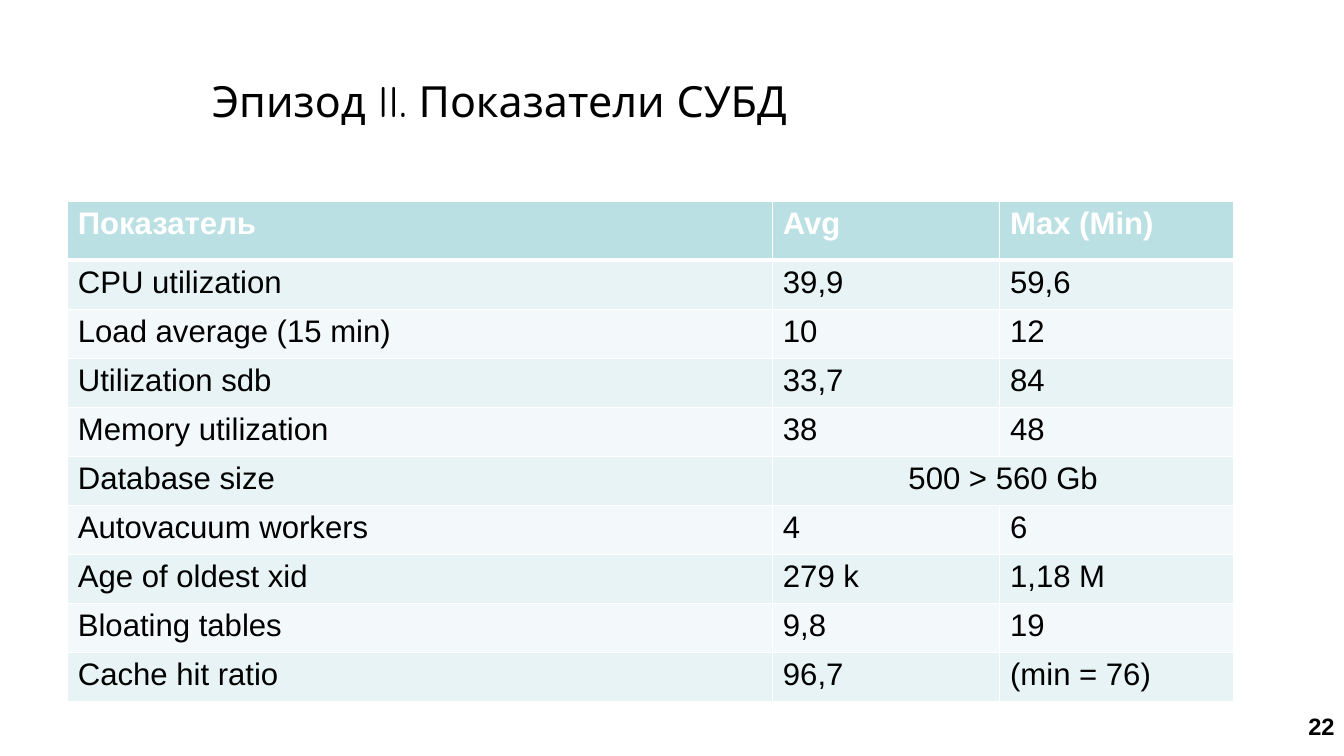
import lxml.etree
import pptx
import pptx.dml.color
import pptx.enum.text
import pptx.oxml.ns
import pptx.util

COLORS = {
    "text": "000000",
    "header_text": "FFFFFF",
    "border": "FFFFFF",
    "header": "BBE0E3",
    "odd_row": "E7F3F4",
    "even_row": "F3F9FA",
}
Inches = pptx.util.Inches
Align = pptx.enum.text.PP_ALIGN

COLUMN_WIDTHS = [6.61, 2.13, 2.2]
HEADER_HEIGHT, ROW_HEIGHT = 0.55, 0.46
METRICS = [
    ("Показатель", "Avg", "Max (Min)"),
    ("CPU utilization", "39,9", "59,6"),
    ("Load average (15 min)", "10", "12"),
    ("Utilization sdb", "33,7", "84"),
    ("Memory utilization", "38", "48"),
    ("Database size", "500 > 560 Gb", None),
    ("Autovacuum workers", "4", "6"),
    ("Age of oldest xid", "279 k", "1,18 M"),
    ("Bloating tables", "9,8", "19"),
    ("Cache hit ratio", "96,7", "(min = 76)"),
]


def write_text(text_frame, text, size, font_name, color, bold=False, alignment=Align.LEFT):
    text_frame.text = text
    text_frame.word_wrap = True
    paragraph = text_frame.paragraphs[0]
    paragraph.alignment = alignment
    font = paragraph.runs[0].font
    font.size = pptx.util.Pt(size)
    font.name = font_name
    font.bold = bold
    font.color.rgb = pptx.dml.color.RGBColor.from_string(COLORS[color])


def set_borders(cell, bottom_width, top_width):
    """Draw the four cell borders; they must precede the fill in tcPr."""
    properties = cell._tc.get_or_add_tcPr()
    widths = {"lnL": 1, "lnR": 1, "lnT": top_width, "lnB": bottom_width}
    for position, (side, width) in enumerate(widths.items()):
        line = lxml.etree.Element(pptx.oxml.ns.qn(f"a:{side}"), w=str(pptx.util.Pt(width)))
        fill = lxml.etree.SubElement(line, pptx.oxml.ns.qn("a:solidFill"))
        lxml.etree.SubElement(fill, pptx.oxml.ns.qn("a:srgbClr"), val=COLORS["border"])
        properties.insert(position, line)


presentation = pptx.Presentation()
presentation.slide_width = Inches(12.6)
presentation.slide_height = Inches(7.09)
slide = presentation.slides.add_slide(presentation.slide_layouts[6])

# Slide number
number_box = slide.shapes.add_textbox(Inches(11.6), Inches(6.6), Inches(1.01), Inches(0.39))
write_text(number_box.text_frame, "22", 16, "Arial", "text", bold=True, alignment=Align.RIGHT)
number_box.text_frame.paragraphs[0].line_spacing = 1.1

# Title
title_box = slide.shapes.add_textbox(Inches(1.89), Inches(0.38), Inches(5.86), Inches(1.12))
write_text(title_box.text_frame, "Эпизод II. Показатели СУБД", 29, "Quicksand", "text")
title_box.text_frame.vertical_anchor = pptx.enum.text.MSO_ANCHOR.MIDDLE

# Metrics table
table_height = HEADER_HEIGHT + ROW_HEIGHT * (len(METRICS) - 1)
table = slide.shapes.add_table(
    len(METRICS), len(COLUMN_WIDTHS),
    Inches(0.63), Inches(1.89), Inches(sum(COLUMN_WIDTHS)), Inches(table_height),
).table
for column, width in zip(table.columns, COLUMN_WIDTHS):
    column.width = Inches(width)

for row_index, values in enumerate(METRICS):
    is_header = row_index == 0
    table.rows[row_index].height = Inches(HEADER_HEIGHT if is_header else ROW_HEIGHT)
    row_fill = "header" if is_header else ("even_row", "odd_row")[row_index % 2]
    spans_columns = values[-1] is None
    if spans_columns:
        table.cell(row_index, 1).merge(table.cell(row_index, 2))

    for column_index, value in enumerate(values):
        cell = table.cell(row_index, column_index)
        cell.fill.solid()
        cell.fill.fore_color.rgb = pptx.dml.color.RGBColor.from_string(COLORS[row_fill])
        set_borders(cell, bottom_width=3 if is_header else 1, top_width=3 if row_index == 1 else 1)
        if value is None:
            continue
        centered = spans_columns and column_index == 1
        write_text(
            cell.text_frame, value, 21, "Arial",
            "header_text" if is_header else "text",
            bold=is_header,
            alignment=Align.CENTER if centered else Align.LEFT,
        )

presentation.save("out.pptx")
